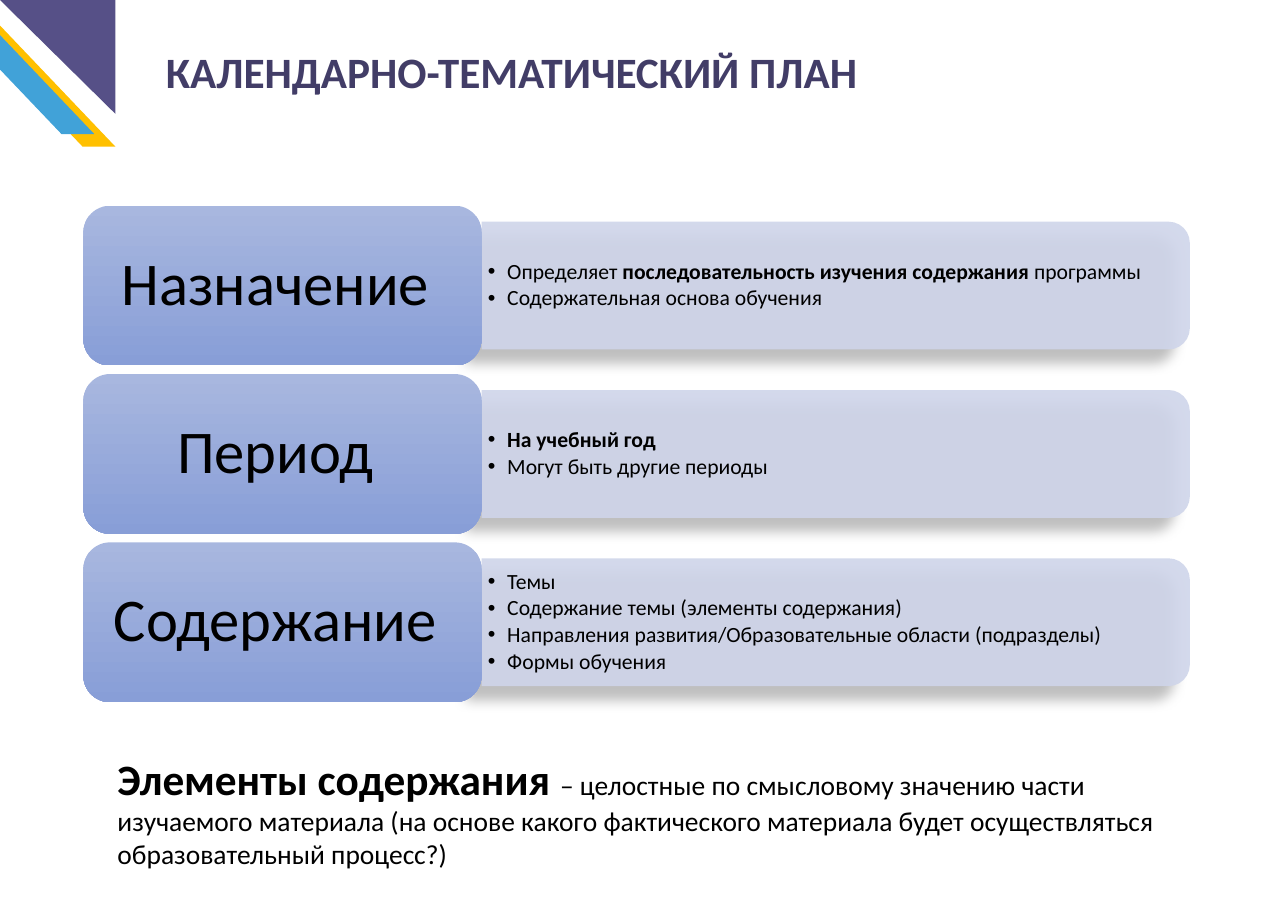
from lxml.etree import SubElement
from pptx import Presentation
from pptx.dml.color import RGBColor
from pptx.enum.shapes import MSO_SHAPE
from pptx.enum.text import MSO_ANCHOR, PP_ALIGN
from pptx.oxml import parse_xml
from pptx.oxml.ns import nsdecls, qn
from pptx.util import Inches, Pt

COLORS = {
    "text": "000000", "title": "423D67", "violet": "565087", "blue": "41A2D8",
    "yellow": "FFC000", "panel": "CFD5EA", "label_top": "A8B7DF", "label_bottom": "889ED7",
}
ROWS = [
    ("Назначение", [
        [("Определяет ", False), ("последовательность изучения содержания", True), (" программы", False)],
        [("Содержательная основа обучения", False)],
    ]),
    ("Период", [
        [("На учебный год", True)],
        [("Могут быть другие периоды", False)],
    ]),
    ("Содержание", [
        [("Темы", False)],
        [("Содержание темы (элементы содержания)", False)],
        [("Направления развития/Образовательные области (подразделы)", False)],
        [("Формы обучения", False)],
    ]),
]
ROW_TOP, ROW_PITCH = 2.64, 2.16
LABEL_LEFT, LABEL_W, LABEL_H = 1.07, 5.11, 2.05
PANEL_W, PANEL_H = 9.09, 1.64


def rgb(name):
    return RGBColor.from_string(COLORS[name])


def add_shape(s, kind, x, y, w, h, color=None):
    sp = s.shapes.add_shape(kind, Inches(x), Inches(y), Inches(w), Inches(h))
    sp.shadow.inherit = False
    sp.line.fill.background()
    if color:
        sp.fill.solid()
        sp.fill.fore_color.rgb = rgb(color)
    return sp


def set_insets(tf, left, top, right, bottom):
    tf.margin_left, tf.margin_top = Inches(left), Inches(top)
    tf.margin_right, tf.margin_bottom = Inches(right), Inches(bottom)


def add_run(p, text, size, color="text", bold=False):
    r = p.add_run()
    r.text = text
    r.font.name, r.font.size, r.font.bold = "Calibri", Pt(size), bold
    r.font.color.rgb = rgb(color)


def add_text(s, x, y, w, h):
    tf = s.shapes.add_textbox(Inches(x), Inches(y), Inches(w), Inches(h)).text_frame
    tf.word_wrap = True
    return tf


def add_corner(s):
    for x, y, color in [(-0.79, -0.06, "yellow"), (-1.06, -0.22, "blue")]:
        sp = add_shape(s, MSO_SHAPE.PARALLELOGRAM, x, y, 2.27, 1.94, color)
        sp.adjustments[0] = 0.953
        sp._element.spPr.find(qn("a:xfrm")).set("flipH", "1")
    add_shape(s, MSO_SHAPE.RIGHT_TRIANGLE, 0, 0, 1.48, 1.46, "violet").rotation = 180


def add_panel(s, left, middle):
    x = left + (PANEL_W - PANEL_H) / 2
    sp = add_shape(s, MSO_SHAPE.ROUND_2_SAME_RECTANGLE, x, middle - PANEL_W / 2,
                   PANEL_H, PANEL_W, "panel")
    sp.rotation = 90
    spPr = sp._element.spPr
    SubElement(spPr.find(qn("a:solidFill"))[0], qn("a:alpha"), val="90000")
    effects = spPr.find(qn("a:effectLst"))
    effects.append(parse_xml(
        f'<a:outerShdw {nsdecls("a")} blurRad="{Pt(11.8)}" dist="{Pt(19.7)}" '
        f'dir="{141 * 60000}" rotWithShape="0"><a:srgbClr val="{COLORS["text"]}">'
        '<a:alpha val="28000"/></a:srgbClr></a:outerShdw>'))


def add_bullets(s, left, middle, items):
    h = 1.48
    tf = add_text(s, left, middle - h / 2, 9.01, h)
    tf.vertical_anchor = MSO_ANCHOR.MIDDLE
    set_insets(tf, 0.08, 0.04, 0.08, 0.04)
    for i, runs in enumerate(items):
        p = tf.add_paragraph() if i else tf.paragraphs[0]
        pPr = p._p.get_or_add_pPr()
        pPr.set("marL", str(Inches(0.25)))
        pPr.set("indent", str(Inches(-0.25)))
        SubElement(pPr, qn("a:buFont"), typeface="Arial")
        SubElement(pPr, qn("a:buChar"), char="•")
        p.line_spacing, p.space_after = 0.9, Pt(3)
        for text, bold in runs:
            add_run(p, text, 20, bold=bold)


def add_label(s, top, text):
    sp = add_shape(s, MSO_SHAPE.ROUNDED_RECTANGLE, LABEL_LEFT, top, LABEL_W, LABEL_H)
    sp.fill.gradient()
    sp.fill.gradient_angle = 270
    for stop, color, position in zip(sp.fill.gradient_stops, ("label_top", "label_bottom"), (0, 1)):
        stop.color.rgb = rgb(color)
        stop.position = position
    tf = sp.text_frame
    tf.word_wrap, tf.vertical_anchor = True, MSO_ANCHOR.MIDDLE
    set_insets(tf, 0.15, 0.12, 0.33, 0.12)
    p = tf.paragraphs[0]
    p.alignment, p.line_spacing = PP_ALIGN.CENTER, 0.9
    add_run(p, text, 56)


def main():
    """Build the calendar and thematic plan slide."""
    prs = Presentation()
    prs.slide_width, prs.slide_height = Inches(16.53), Inches(11.69)
    s = prs.slides.add_slide(prs.slide_layouts[6])
    add_corner(s)
    title = add_text(s, 2.03, 0.53, 13.24, 0.77)
    add_run(title.paragraphs[0], "КАЛЕНДАРНО-ТЕМАТИЧЕСКИЙ ПЛАН", 40, "title", True)
    for i, (label, items) in enumerate(ROWS):
        top = ROW_TOP + i * ROW_PITCH
        left, middle = LABEL_LEFT + LABEL_W, top + LABEL_H / 2
        add_panel(s, left, middle)
        add_bullets(s, left, middle, items)
        add_label(s, top, label)
    p = add_text(s, 1.41, 9.6, 14.23, 1.63).paragraphs[0]
    add_run(p, "Элементы содержания ", 40, bold=True)
    add_run(p, "– целостные по смысловому значению части изучаемого материала (на основе какого "
            "фактического материала будет осуществляться образовательный процесс?)", 25.4)
    prs.save("out.pptx")


if __name__ == "__main__":
    main()
